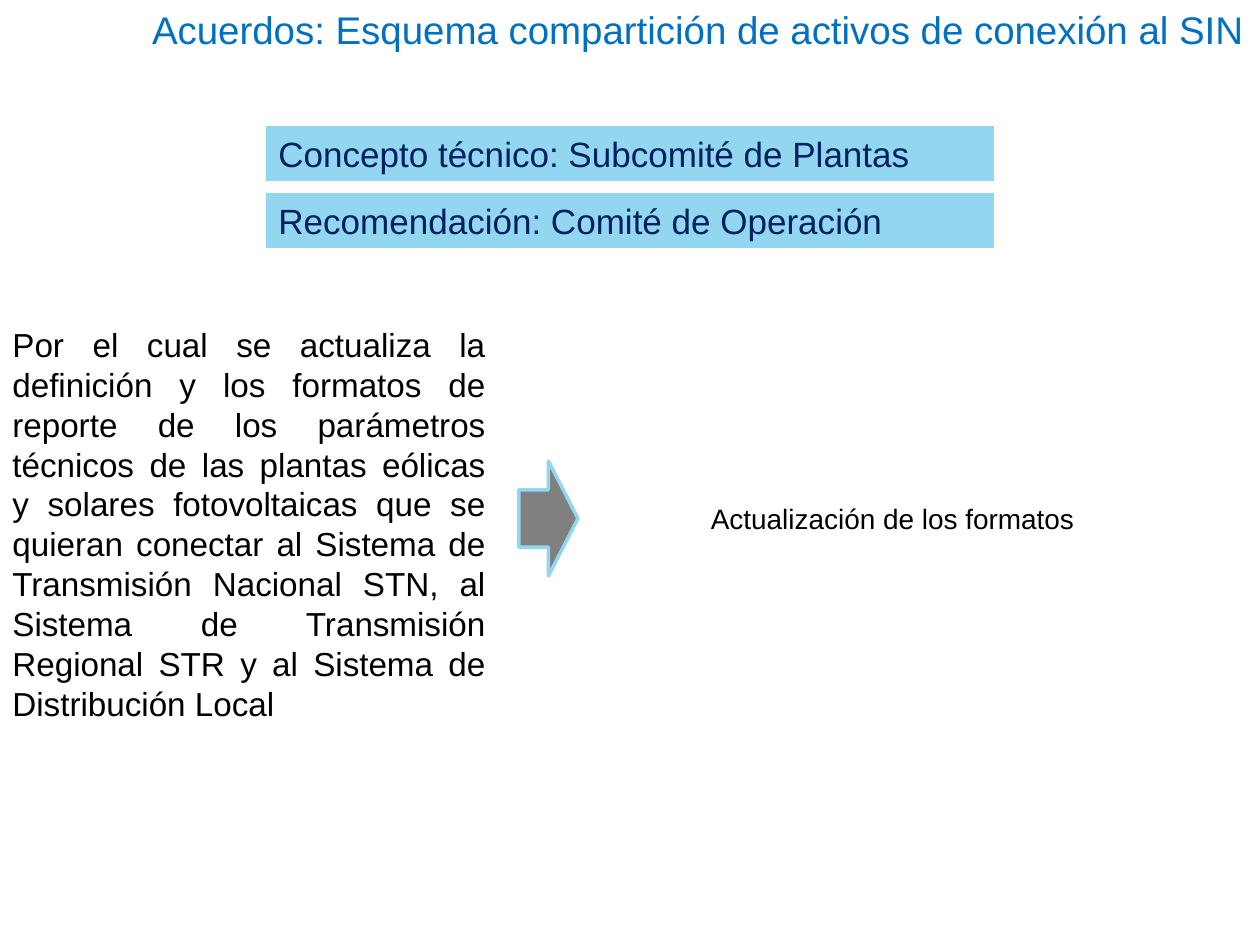
from pptx import Presentation
from pptx import util as u
from pptx.dml.color import RGBColor
from pptx.enum import shapes, text

PX = 914400 // 126
HEX = {"band": "92D6F0", "navy": "002060", "black": "000000",
       "blue": "0070C0", "gray": "808080"}

BANDS = ["Concepto técnico: Subcomité de Plantas",
         "Recomendación: Comité de Operación"]
BAND_BOX, BAND_STEP = (266, 126, 728, 55), 67
ARROW_BOX = (491, 489, 115, 59)

# words, box in px, alignment, font size, colour
TEXTS = [
    ("Por el cual se actualiza la definición y los formatos de reporte de los "
     "parámetros técnicos de las plantas eólicas y solares fotovoltaicas que se "
     "quieran conectar al Sistema de Transmisión Nacional STN, al Sistema de "
     "Transmisión Regional STR y al Sistema de Distribución Local",
     (0, 318, 498, 416), "JUSTIFY", 19, "black"),
    ("Actualización de los formatos", (599, 495, 587, 47), "CENTER", 16, "black"),
    ("Acuerdos: Esquema compartición de activos de conexión al SIN",
     (118, 0, 1138, 59), "RIGHT", 22, "blue"),
]


def color(name):
    return RGBColor.from_string(HEX[name])


def emu(box):
    return [n * PX for n in box]


def write(shape, words, align, size, hue):
    frame = shape.text_frame
    frame.word_wrap = True
    frame.vertical_anchor = text.MSO_ANCHOR.TOP
    para = frame.paragraphs[0]
    para.alignment = getattr(text.PP_ALIGN, align)
    run = para.add_run()
    run.text = words
    for key, value in {"name": "Arial", "size": u.Pt(size)}.items():
        setattr(run.font, key, value)
    run.font.color.rgb = color(hue)


def draw(slide, kind, box, fill):
    """Add a preset shape with a plain fill, no line and no shadow."""
    shape = slide.shapes.add_shape(kind, *emu(box))
    shape.shadow.inherit = False
    shape.fill.solid()
    shape.fill.fore_color.rgb = color(fill)
    shape.line.fill.background()
    return shape


def main():
    deck = Presentation()
    deck.slide_width, deck.slide_height = u.Inches(10), u.Inches(7.5)
    slide = deck.slides.add_slide(deck.slide_layouts[6])

    left, top, width, height = BAND_BOX
    for i, words in enumerate(BANDS):
        band = draw(slide, shapes.MSO_SHAPE.RECTANGLE,
                    (left, top + i * BAND_STEP, width, height), "band")
        write(band, words, "JUSTIFY", 20, "navy")

    arrow = draw(slide, shapes.MSO_SHAPE.DOWN_ARROW, ARROW_BOX, "gray")
    arrow.rotation = 270
    arrow.line.color.rgb = color("band")
    arrow.line.width = u.Pt(2)

    for words, box, *style in TEXTS:
        write(slide.shapes.add_textbox(*emu(box)), words, *style)

    deck.save("out.pptx")


if __name__ == "__main__":
    main()
